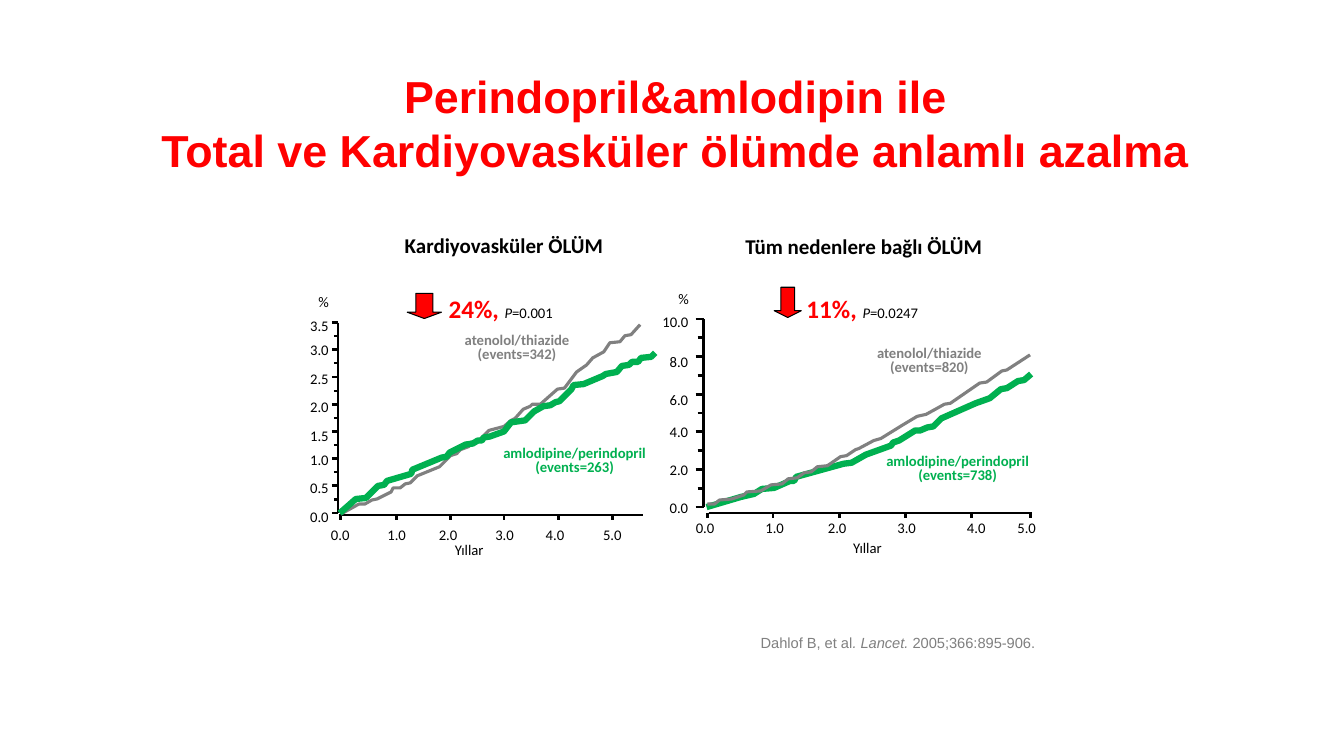
from lxml.etree import SubElement
from pptx import Presentation
from pptx.dml.color import RGBColor
from pptx.enum.shapes import MSO_CONNECTOR, MSO_SHAPE
from pptx.enum.text import MSO_ANCHOR, PP_ALIGN
from pptx.oxml.ns import qn
from pptx.util import Pt

RED = RGBColor(0xFF, 0x00, 0x00)
GREEN = RGBColor(0x00, 0xB0, 0x50)
GRAY = RGBColor(0x80, 0x80, 0x80)
BLACK = RGBColor(0x00, 0x00, 0x00)

TITLE = ["Perindopril&amlodipin ile", "Total ve Kardiyovasküler ölümde anlamlı azalma"]
CITATION = ["Dahlof B, et al", ". Lancet. ", "2005;366:895-906."]
X_TITLE = "Yıllar"
Y_TITLE = "%"
SMALL = 10.5
LABEL_HEIGHT = 13
CURVE_UNIT = 0.72  # points per step of the curve coordinates

# Curve coordinates run right and up from the panel's origin.
# x_labels: text, tick position, label centre; y_labels: text, label top.
CARDIOVASCULAR = {
    "heading": ("Kardiyovasküler ÖLÜM", (252, 167.8, 216, 27)),
    "arrow": (290.9, 209.5, 24.5, 18),
    "reduction": ("24%, ", "=0.001", (320.4, 209.5, 89.3, 21.6)),
    "origin": (243.4, 366.5),
    "x_axis": (243.4, 459.4, 367.9),
    "x_labels": [("0.0", 243.4, 243), ("1.0", 283, 283.3), ("2.0", 321.8, 320),
                 ("3.0", 360, 360.4), ("4.0", 398.9, 396.4), ("5.0", 437.8, 437.4)],
    "x_label_top": 375.6,
    "x_title": (335.2, 386.6),
    "y_axis": (241.4, 230.4, 366.5),
    "y_labels": [("0.0", 362.9), ("0.5", 342), ("1.0", 321.8), ("1.5", 304.6),
                 ("2.0", 284.4), ("2.5", 264.2), ("3.0", 243.4), ("3.5", 226.1)],
    "y_label_right": 235,
    "y_title": (229.3, 209.5),
    "major": (4.3, 2),
    "minor": (2.9, 1.5),
    "curves": [
        (GRAY, 2.25, [
            (0, -1), (18, 9), (24, 9), (31, 13), (36, 14), (50, 21), (52, 25), (59, 25),
            (64, 29), (69, 30), (76, 37), (98, 46), (109, 57), (115, 59), (119, 63),
            (127, 66), (128, 70), (137, 72), (147, 82), (162, 86), (169, 92), (173, 94),
            (181, 103), (188, 106), (190, 108), (198, 108), (215, 123), (222, 124),
            (234, 140), (244, 147), (250, 154), (261, 160), (267, 169), (277, 170),
            (282, 176), (288, 177), (297, 187)]),
        (GREEN, 4.5, [
            (-1, 0), (15, 14), (25, 15), (37, 27), (43, 28), (46, 32), (70, 39), (71, 43),
            (100, 55), (105, 56), (108, 60), (124, 68), (131, 69), (136, 72), (140, 72),
            (142, 75), (148, 76), (162, 81), (169, 90), (183, 92), (192, 101), (201, 106),
            (208, 107), (213, 110), (217, 111), (229, 123), (231, 127), (241, 128),
            (260, 136), (263, 138), (274, 140), (279, 146), (286, 147), (289, 150),
            (295, 150), (298, 154), (308, 155), (312, 159)]),
    ],
    "treatments": [
        (["atenolol/thiazide", "(events=342)"], GRAY, (331.2, 239, 76.3, 20.2)),
        (["amlodipine/perindopril", "(events=263)"], GREEN, (358.6, 319.7, 103.7, 20.2)),
    ],
}
ALL_CAUSE = {
    "heading": ("Tüm nedenlere bağlı ÖLÜM", (509, 169.2, 216, 24.5)),
    "arrow": (553, 205.2, 19.4, 21.6),
    "reduction": ("11%, ", "=0.0247", (576, 209.5, 95, 21.6)),
    "origin": (505.4, 362.2),
    "x_axis": (506.2, 737.3, 366.5),
    "x_labels": [("0.0", 505.4, 503.6), ("1.0", 552.2, 553.3), ("2.0", 599.4, 598),
                 ("3.0", 646.9, 647.6), ("4.0", 694.1, 697.3), ("5.0", 735.8, 733.3)],
    "x_label_top": 370.8,
    "x_title": (619.6, 385.2),
    "y_axis": (502.6, 227.9, 362.2),
    "y_labels": [("0.0", 356.4), ("2.0", 329), ("4.0", 301.7),
                 ("6.0", 279.4), ("8.0", 252), ("10.0", 223.2)],
    "y_label_right": 491.8,
    "y_title": (486.4, 207),
    "major": (5.8, 2),
    "minor": (4.3, 2),
    "curves": [
        (GREEN, 4.5, [
            (-1, 0), (33, 10), (46, 13), (54, 18), (66, 19), (82, 26), (86, 26), (88, 30),
            (135, 43), (143, 44), (157, 52), (182, 61), (184, 64), (190, 66), (206, 76),
            (211, 76), (218, 79), (224, 80), (232, 88), (266, 103), (280, 108),
            (291, 117), (297, 118), (308, 125), (314, 126), (321, 132)]),
        (GRAY, 2.25, [
            (0, 3), (7, 3), (12, 7), (24, 8), (36, 12), (39, 15), (53, 16), (63, 22),
            (74, 23), (80, 28), (89, 29), (96, 34), (103, 35), (109, 40), (119, 41),
            (132, 50), (138, 51), (147, 57), (150, 58), (165, 66), (172, 68), (193, 81),
            (208, 90), (217, 92), (235, 102), (241, 103), (270, 123), (277, 124),
            (292, 135), (297, 136), (320, 151)]),
    ],
    "treatments": [
        (["atenolol/thiazide", "(events=820)"], GRAY, (625.7, 247.7, 76.3, 20.2)),
        (["amlodipine/perindopril", "(events=738)"], GREEN, (632.2, 325.4, 103.7, 20.2)),
    ],
}


def add_text(slide, box, lines, size=SMALL, color=BLACK, bold=False, font="Calibri",
             align=PP_ALIGN.CENTER, spacing=None, wrap=False, margin=0):
    """Add a text box; each line is a list of runs or a single string."""
    frame = slide.shapes.add_textbox(*map(Pt, box)).text_frame
    frame.word_wrap = wrap
    frame.margin_left = frame.margin_right = Pt(2 * margin)
    frame.margin_top = frame.margin_bottom = Pt(margin)
    for i, line in enumerate(lines):
        paragraph = frame.add_paragraph() if i else frame.paragraphs[0]
        paragraph.alignment = align
        if spacing:
            paragraph.line_spacing = spacing
        for piece in [line] if isinstance(line, str) else line:
            paragraph.add_run().text = piece
        paragraph.font.name = font
        paragraph.font.size = Pt(size)
        paragraph.font.bold = bold
        paragraph.font.color.rgb = color
    return frame


def add_label(slide, text, center, top):
    width = 5 * len(text) - 1.3
    add_text(slide, (center - width / 2, top, width, LABEL_HEIGHT), [text])


def add_line(slide, x1, y1, x2, y2, width=2):
    line = slide.shapes.add_connector(MSO_CONNECTOR.STRAIGHT, *map(Pt, (x1, y1, x2, y2)))
    line.line.color.rgb = BLACK
    line.line.width = Pt(width)
    SubElement(line._element.spPr, qn("a:effectLst"))


def draw_axes(slide, panel):
    left, right, axis_y = panel["x_axis"]
    add_line(slide, left, axis_y, right, axis_y)
    for text, tick, center in panel["x_labels"]:
        add_line(slide, tick, axis_y - 0.4, tick, axis_y + 3.8)
        add_label(slide, text, center, panel["x_label_top"])
    add_label(slide, X_TITLE, *panel["x_title"])

    axis_x, top, bottom = panel["y_axis"]
    add_line(slide, axis_x, top, axis_x, bottom)
    intervals = 2 * (len(panel["y_labels"]) - 1)
    for i in range(intervals + 1):
        length, width = panel["minor" if i % 2 else "major"]
        y = bottom - i * (bottom - top) / intervals
        add_line(slide, axis_x - length, y, axis_x, y, width)
    for text, label_top in panel["y_labels"]:
        center = panel["y_label_right"] - (5 * len(text) - 1.3) / 2
        add_label(slide, text, center, label_top)
    add_label(slide, Y_TITLE, *panel["y_title"])


def draw_curve(slide, origin, color, width, points):
    (start_x, start_y), *rest = [(x, -y) for x, y in points]
    builder = slide.shapes.build_freeform(start_x, start_y, scale=Pt(CURVE_UNIT))
    builder.add_line_segments(rest, close=False)
    curve = builder.convert_to_shape(*map(Pt, origin))
    curve.shadow.inherit = False
    curve.fill.background()
    curve.line.color.rgb = color
    curve.line.width = Pt(width)


def draw_panel(slide, panel):
    heading, box = panel["heading"]
    add_text(slide, box, [heading], size=15, bold=True, spacing=0.9, wrap=True)
    draw_axes(slide, panel)
    for curve in panel["curves"]:
        draw_curve(slide, panel["origin"], *curve)
    for lines, color, box in panel["treatments"]:
        add_text(slide, box, lines, color=color, bold=True, spacing=0.8)

    arrow = slide.shapes.add_shape(MSO_SHAPE.DOWN_ARROW, *map(Pt, panel["arrow"]))
    arrow.adjustments[0], arrow.adjustments[1] = 0.5, 0.25
    arrow.shadow.inherit = False
    arrow.fill.solid()
    arrow.fill.fore_color.rgb = RED
    arrow.line.color.rgb = BLACK
    arrow.line.width = Pt(0.75)

    percent, p_value, box = panel["reduction"]
    frame = add_text(slide, box, [[percent, "P", p_value]], align=PP_ALIGN.LEFT, wrap=True)
    percent_run, p_run, _ = frame.paragraphs[0].runs
    percent_run.font.size = Pt(18)
    percent_run.font.bold = True
    percent_run.font.color.rgb = RED
    p_run.font.italic = True


def main():
    presentation = Presentation()
    presentation.slide_width, presentation.slide_height = Pt(960), Pt(540)
    slide = presentation.slides.add_slide(presentation.slide_layouts[6])
    for panel in (CARDIOVASCULAR, ALL_CAUSE):
        draw_panel(slide, panel)
    citation = add_text(slide, (527, 448.6, 219.6, 20.2), [CITATION], color=GRAY,
                        font="Arial", align=PP_ALIGN.RIGHT, wrap=True, margin=3.6)
    citation.vertical_anchor = MSO_ANCHOR.BOTTOM
    citation.paragraphs[0].runs[1].font.italic = True
    add_text(slide, (80.6, 45.4, 804.2, 67.7), TITLE, size=32, color=RED, bold=True,
             font="Arial", wrap=True, margin=3.6)
    presentation.save("out.pptx")


if __name__ == "__main__":
    main()
